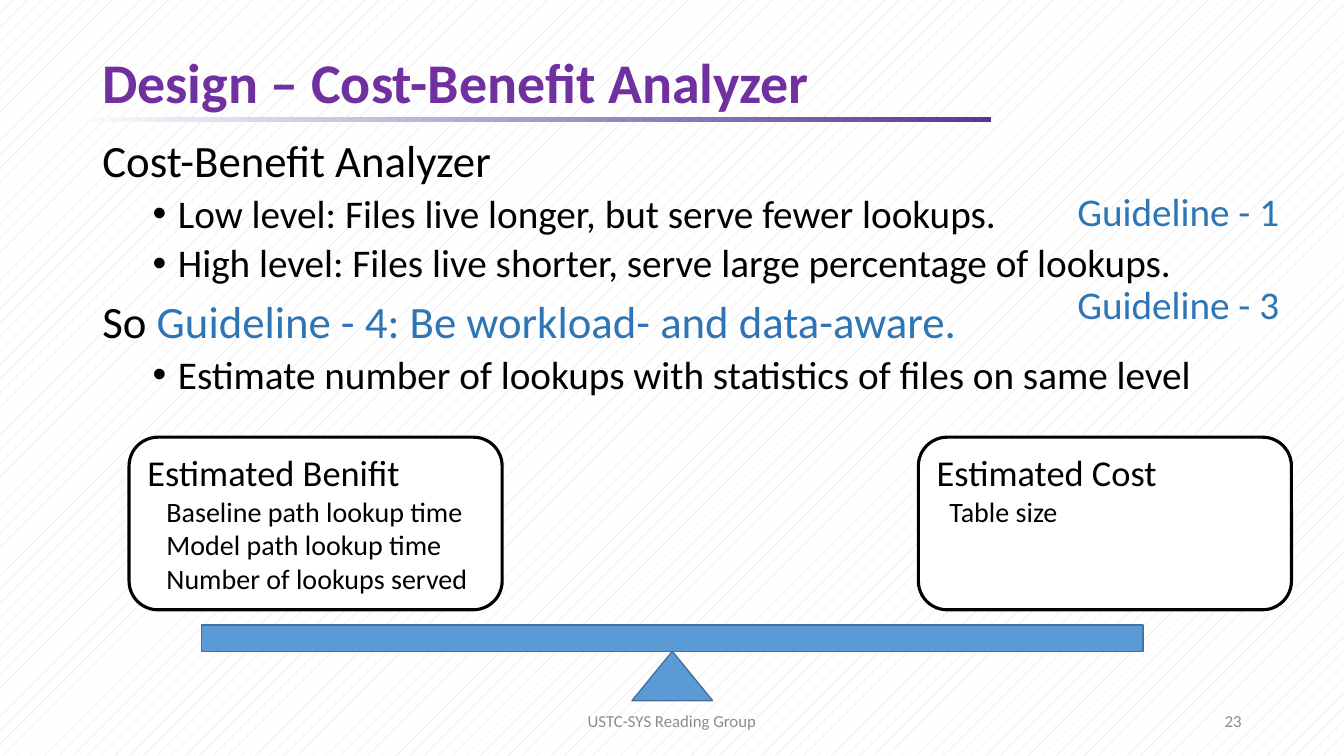
from lxml import etree
from pptx import Presentation
from pptx.dml.color import RGBColor
from pptx.enum.dml import MSO_PATTERN
from pptx.enum.shapes import MSO_SHAPE
from pptx.enum.text import MSO_ANCHOR, PP_ALIGN
from pptx.oxml.ns import qn
from pptx.util import Pt

DOTS = MSO_PATTERN.PERCENT_5
RECTANGLE = MSO_SHAPE.RECTANGLE
TRIANGLE = MSO_SHAPE.ISOSCELES_TRIANGLE
ROUNDED = MSO_SHAPE.ROUNDED_RECTANGLE
TOP, MIDDLE = MSO_ANCHOR.TOP, MSO_ANCHOR.MIDDLE
LEFT, CENTER, RIGHT = PP_ALIGN.LEFT, PP_ALIGN.CENTER, PP_ALIGN.RIGHT
FONT = "Calibri"
COLORS = {
    "white": "FFFFFF", "black": "000000", "dots": "D9D9D9",
    "title": "7030A0", "guideline": "2E75B6", "footer": "8C8C8C",
    "rule_start": "F7FAFD", "rule_end": "543795",
    "scale": "5B9BD5", "scale_line": "43739E",
}


def color(name):
    return RGBColor.from_string(COLORS[name])


def add_run(paragraph, text, size, color_name="black", bold=False):
    run = paragraph.add_run()
    run.text = text
    run.font.name = FONT
    run.font.size = Pt(size)
    run.font.bold = bold
    run.font.color.rgb = color(color_name)


def set_indent(paragraph, margin, hanging=0, bullet=None):
    properties = paragraph._p.get_or_add_pPr()
    properties.set("marL", str(Pt(margin)))
    properties.set("indent", str(-Pt(hanging)))
    if bullet:
        etree.SubElement(properties, qn("a:buFont")).set("typeface", "Arial")
        etree.SubElement(properties, qn("a:buChar")).set("char", bullet)


def add_text_frame(slide, box, anchor=TOP, wrap=True):
    frame = slide.shapes.add_textbox(*map(Pt, box)).text_frame
    frame.word_wrap = wrap
    frame.vertical_anchor = anchor
    return frame


def add_label(slide, box, text, size, color_name, align=LEFT,
              anchor=MIDDLE, wrap=True, bold=False):
    frame = add_text_frame(slide, box, anchor, wrap)
    paragraph = frame.paragraphs[0]
    paragraph.alignment = align
    add_run(paragraph, text, size, color_name, bold)


def add_block(slide, kind, box, fill, line=None, line_width=1):
    shape = slide.shapes.add_shape(kind, *map(Pt, box))
    shape.shadow.inherit = False
    shape.fill.solid()
    shape.fill.fore_color.rgb = color(fill)
    if line:
        shape.line.color.rgb = color(line)
        shape.line.width = Pt(line_width)
    else:
        shape.line.fill.background()
    return shape


def add_heading(slide, box, text):
    left, top, width, height = box
    rule = add_block(slide, RECTANGLE, (left, top + 52.6, 642.2, 3.6), "rule_end")
    rule.fill.gradient()
    rule.fill.gradient_angle = 0
    for stop, name in zip(rule.fill.gradient_stops, ("rule_start", "rule_end")):
        stop.color.rgb = color(name)
    add_label(slide, box, text, 40, "title", bold=True)


def add_body(slide, box, items):
    frame = add_text_frame(slide, box)
    for index, (level, runs) in enumerate(items):
        paragraph = frame.paragraphs[0] if index == 0 else frame.add_paragraph()
        if level:
            set_indent(paragraph, 54, 18, "•")
        paragraph.line_spacing = 0.9
        if index:
            paragraph.space_before = Pt(5 if level else 10)
        for text, color_name in runs:
            add_run(paragraph, text, 28 if level else 32, color_name)


def add_estimate(slide, box, heading, factors, indent):
    frame = add_block(slide, ROUNDED, box, "white", "black", 2.25).text_frame
    frame.word_wrap = True
    frame.vertical_anchor = TOP
    frame.paragraphs[0].alignment = LEFT
    add_run(frame.paragraphs[0], heading, 26)
    for factor in factors:
        paragraph = frame.add_paragraph()
        paragraph.alignment = LEFT
        set_indent(paragraph, indent)
        add_run(paragraph, factor, 20)


def add_balance(slide, box):
    left, top, width, height = box
    beam, pivot = 18.7, 57.6
    pivot_box = (left + (width - pivot) / 2, top + beam, pivot, height - beam)
    add_block(slide, TRIANGLE, pivot_box, "scale", "scale_line")
    add_block(slide, RECTANGLE, (left, top, width, beam), "scale", "scale_line")


def add_footer(slide, box, group, number):
    left, top, width, height = box
    add_label(slide, (left, top, 324, height), group, 12, "footer", CENTER)
    add_label(slide, (left + width - 216, top, 216, height), number, 12, "footer", RIGHT)


def build_analyzer_slide(presentation):
    slide = presentation.slides.add_slide(presentation.slide_layouts[6])
    background = slide.background.fill
    background.patterned()
    background.pattern = DOTS
    background.fore_color.rgb = color("dots")
    background.back_color.rgb = color("white")

    add_heading(slide, (66, 31, 828, 54), "Design – Cost-Benefit Analyzer")
    add_body(slide, (66, 95.8, 865, 404.6), [
        (0, [("Cost-Benefit Analyzer", "black")]),
        (1, [("Low level: Files live longer, but serve fewer lookups.", "black")]),
        (1, [("High level: Files live shorter, serve large percentage of lookups.", "black")]),
        (0, [("So ", "black"),
             ("Guideline - 4: Be workload- and data-aware.", "guideline")]),
        (1, [("Estimate number of lookups with statistics of files on same level", "black")]),
    ])
    add_footer(slide, (318, 500.5, 576, 28.75), "USTC-SYS Reading Group", "23")
    add_balance(slide, (144, 446.5, 672.5, 54))
    estimates = [
        (92.2, "Estimated Benifit", 13.6,
         ["Baseline path lookup time", "Model path lookup time", "Number of lookups served"]),
        (656, "Estimated Cost", 9, ["Table size"]),
    ]
    for left, heading, indent, factors in estimates:
        add_estimate(slide, (left, 312.3, 266.5, 123.3), heading, factors, indent)
    for top, text in ((130.3, "Guideline - 1"), (196.6, "Guideline - 3")):
        add_label(slide, (762.5, top, 162.7, 41), text, 28, "guideline",
                  anchor=TOP, wrap=False)


def main():
    presentation = Presentation()
    presentation.slide_width = Pt(960)
    presentation.slide_height = Pt(540)
    build_analyzer_slide(presentation)
    presentation.save("out.pptx")


if __name__ == "__main__":
    main()
